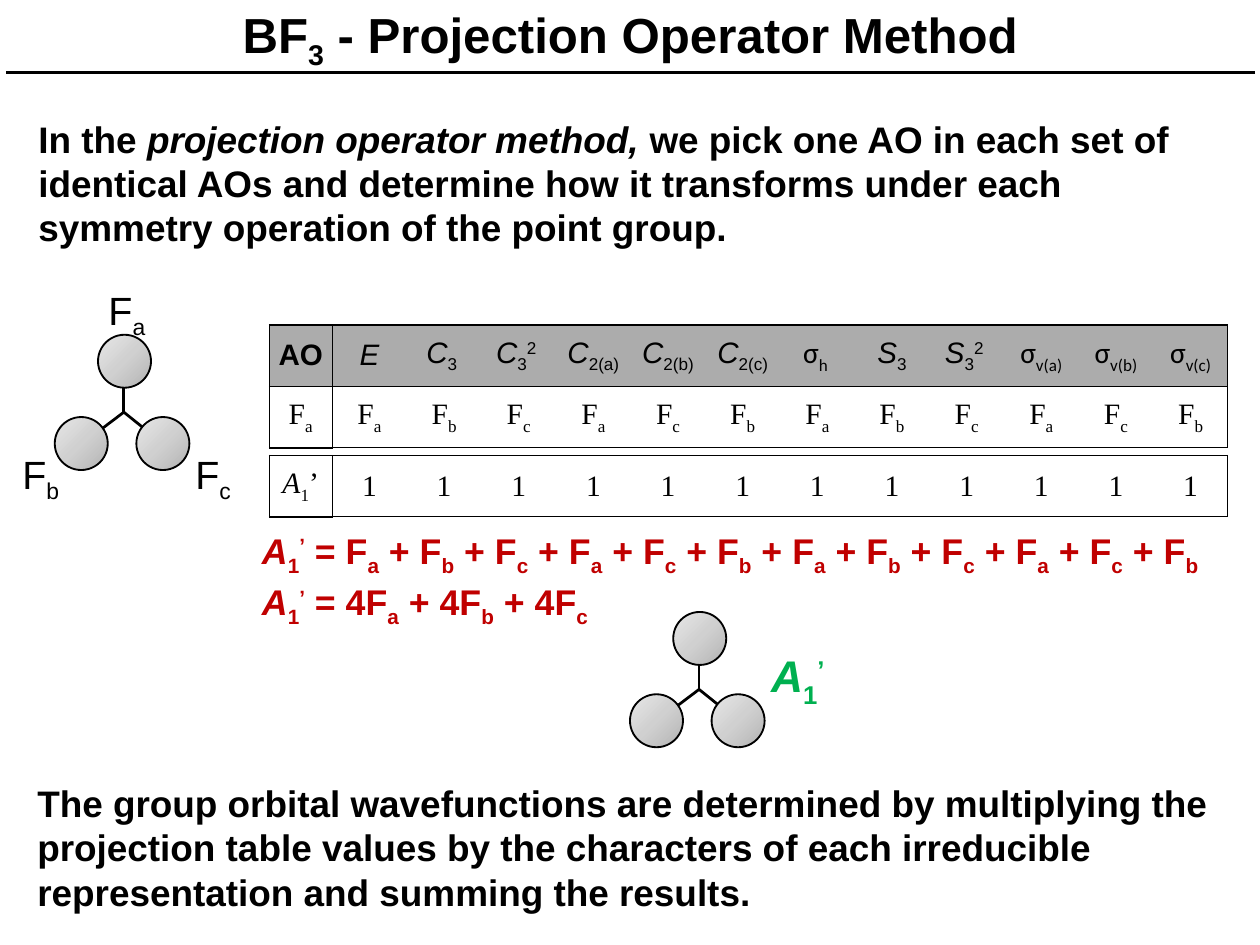
"""Build the slide on the projection operator method for BF3."""
from lxml import etree
from pptx import Presentation
from pptx.dml.color import RGBColor
from pptx.enum.shapes import MSO_CONNECTOR, MSO_SHAPE
from pptx.enum.text import MSO_ANCHOR, PP_ALIGN
from pptx.oxml import parse_xml
from pptx.oxml.ns import nsdecls, qn
from pptx.util import Cm, Pt

# Run flags: b bold, i italic, _ subscript, ^ superscript, k Calibri


def sub(head, low, high="", flags="i"):
    runs = [(head, flags), (low, "_" + flags.replace("i", ""))]
    return runs + ([(high, "^")] if high else [])


ORDER = "abcacbabcacb"
HEAD = [
    [("AO", "b")], [("E", "i")], sub("C", "3 "), sub("C", "3", "2 "),
    sub("C", "2(a)"), sub("C", "2(b)"), sub("C", "2(c)"),
    sub("σ", "h ", flags="k"), sub("S", "3"), sub("S", "3", "2 "),
    sub("σ", "v(a)", flags="k"), sub("σ", "v(b)", flags="k"),
    sub("σ", "v(c)", flags="k"),
]
ORBITS = [sub("F", low, flags="") for low in "a" + ORDER]
ONES = [[("A", "i"), ("1", "_"), ("’", "")]] + [[("1", "")]] * len(ORDER)
TABLES = [(9.32, [HEAD, ORBITS], "Arial"), (13.06, [ONES], "Times New Roman")]


def total(terms, count):
    runs = sub("A", "1", "’")
    for spot, low in enumerate(terms):
        runs += sub((" + " if spot else " = ") + count + "F", low, flags="")
    return runs


LEFT, TOP, MID = PP_ALIGN.LEFT, MSO_ANCHOR.TOP, MSO_ANCHOR.MIDDLE
CENTER = PP_ALIGN.CENTER
SMALL, WIDE, NONE = (0.16, 0.16), (0.25, 0.13), (0, 0)
INTRO = [
    ("In the ", ""), ("projection operator method,", "i"),
    (" we pick one AO in each set of identical AOs and determine how it "
     "transforms under each symmetry operation of the point group.", ""),
]
CLOSE = [("The group orbital wavefunctions are determined by multiplying the "
          "projection table values by the characters of each irreducible "
          "representation and summing the results.", "")]
TITLE = [("BF", ""), ("3", "_"), (" - Projection Operator Method", "")]

BOXES = [
    ((0.15, 0.1, 35.84, 1.98), TITLE, 40, "000000", True, CENTER, MID, SMALL),
    ((0.94, 3.18, 34.93, 1.78), INTRO, 30, "000000", True, LEFT, TOP, SMALL),
    ((0.91, 22.23, 34.93, 1.78), CLOSE, 30, "000000", True, LEFT, TOP, SMALL),
    ((7.26, 15.04, 28.14, 1.5), total(ORDER, ""), 29, "C00000", True,
     LEFT, TOP, WIDE),
    ((7.26, 16.51, 28.14, 1.5), total("abc", "4"), 29, "C00000", True,
     LEFT, TOP, WIDE),
    ((18.03, 17.78, 9.68, 3.38), sub("A", "1", "’"), 36, "00B050", True,
     CENTER, MID, NONE),
] + [
    ((x, y, 3.61, 1.78), sub("F", low, flags=""), 32, "000000", False,
     LEFT, TOP, SMALL)
    for low, x, y in [("a", 2.95, 8.05), ("b", 0.48, 12.75), ("c", 5.44, 12.75)]
]
MODELS = [(1.57, 9.6), (18.06, 17.55)]
HUB, ENDS = (1.98, 2.22), [(0.79, 3.12), (3.1, 3.12), (1.98, 0.81)]
ATOMS, SIZE = [(1.24, 0), (0, 2.36), (2.34, 2.36)], 1.52
STOPS = [(0, "B3B3B3"), (50, "D0D0D0"), (100, "E8E8E8")]


def tint(text):
    return RGBColor.from_string(text)


def write(frame, runs, size, color, face, bold, align):
    para = frame.paragraphs[0]
    para.alignment = align
    for text, flags in runs:
        run = para.add_run()
        run.text = text
        font = run.font
        font.size, font.color.rgb = Pt(size), tint(color)
        font.name = "Calibri" if "k" in flags else face
        font.bold, font.italic = bold or "b" in flags, "i" in flags
        for mark, shift in (("_", "-25000"), ("^", "30000")):
            if mark in flags:
                run._r.get_or_add_rPr().set("baseline", shift)


def pad(part, wide, high):
    part.margin_left = part.margin_right = Cm(wide)
    part.margin_top = part.margin_bottom = Cm(high)


def add_text(shapes, place, runs, size, color, bold, align, anchor, inset):
    frame = shapes.add_textbox(*map(Cm, place)).text_frame
    frame.word_wrap, frame.vertical_anchor = True, anchor
    pad(frame, *inset)
    write(frame, runs, size, color, "Arial", bold, align)


def add_line(shapes, start, end, width):
    line = shapes.add_connector(MSO_CONNECTOR.STRAIGHT, *map(Cm, start + end))
    line.line.color.rgb, line.line.width = tint("000000"), Pt(width)
    etree.SubElement(line._element.spPr, qn("a:effectLst"))


def add_model(shapes, x, y):
    group = shapes.add_group_shape().shapes
    for dx, dy in ENDS:
        add_line(group, (x + HUB[0], y + HUB[1]), (x + dx, y + dy), 2.25)
    stops = "".join(f'<a:gs pos="{at * 1000}"><a:srgbClr val="{color}"/></a:gs>'
                    for at, color in STOPS)
    for dx, dy in ATOMS:
        atom = group.add_shape(MSO_SHAPE.OVAL, Cm(x + dx), Cm(y + dy),
                               Cm(SIZE), Cm(SIZE))
        atom.shadow.inherit = False
        atom.line.color.rgb, atom.line.width = tint("000000"), Pt(1.5)
        atom.fill.background()
        blank = atom._element.spPr.find(qn("a:noFill"))
        blank.getparent().replace(blank, parse_xml(
            f'<a:gradFill {nsdecls("a")} rotWithShape="1"><a:gsLst>{stops}'
            '</a:gsLst><a:path path="circle"><a:fillToRect l="100000" '
            't="100000"/></a:path></a:gradFill>'))


def add_edges(cell, col, last):
    rule = 1 if col else 1.5
    widths = {"L": int(col < 2), "R": int(col in (0, last)),
              "T": rule, "B": rule}
    props = cell._tc.get_or_add_tcPr()
    for spot, (side, width) in enumerate(widths.items()):
        fill = ('<a:solidFill><a:srgbClr val="000000"/></a:solidFill>'
                if width else "<a:noFill/>")
        props.insert(spot, parse_xml(
            f'<a:ln{side} {nsdecls("a")} w="{Pt(width)}">{fill}</a:ln{side}>'))


def add_grid(shapes, top, rows, face):
    last = len(ORDER)
    table = shapes.add_table(len(rows), last + 1, Cm(7.72), Cm(top),
                             Cm(27.5), Cm(1.76 * len(rows))).table
    table.first_row = table.horz_banding = False
    for col, column in enumerate(table.columns):
        column.width = Cm(2.14 if col else 1.8)
    for row, line in enumerate(rows):
        table.rows[row].height = Cm(1.76)
        for col, runs in enumerate(line):
            cell = table.cell(row, col)
            cell.vertical_anchor = MID
            pad(cell, *SMALL)
            if line is HEAD:
                cell.fill.solid()
                cell.fill.fore_color.rgb = tint("ACACAC")
            else:
                cell.fill.background()
            add_edges(cell, col, last)
            write(cell.text_frame, runs, 24, "000000",
                  face if line is HEAD else "Times New Roman", False, CENTER)


def main():
    deck = Presentation()
    deck.slide_width, deck.slide_height = Cm(36.12), Cm(27.1)
    shapes = deck.slides.add_slide(deck.slide_layouts[6]).shapes
    add_line(shapes, (0.18, 2.08), (35.97, 2.08), 3)
    for model in MODELS:
        add_model(shapes, *model)
    for grid in TABLES:
        add_grid(shapes, *grid)
    for box in BOXES:
        add_text(shapes, *box)
    deck.save("out.pptx")


if __name__ == "__main__":
    main()
